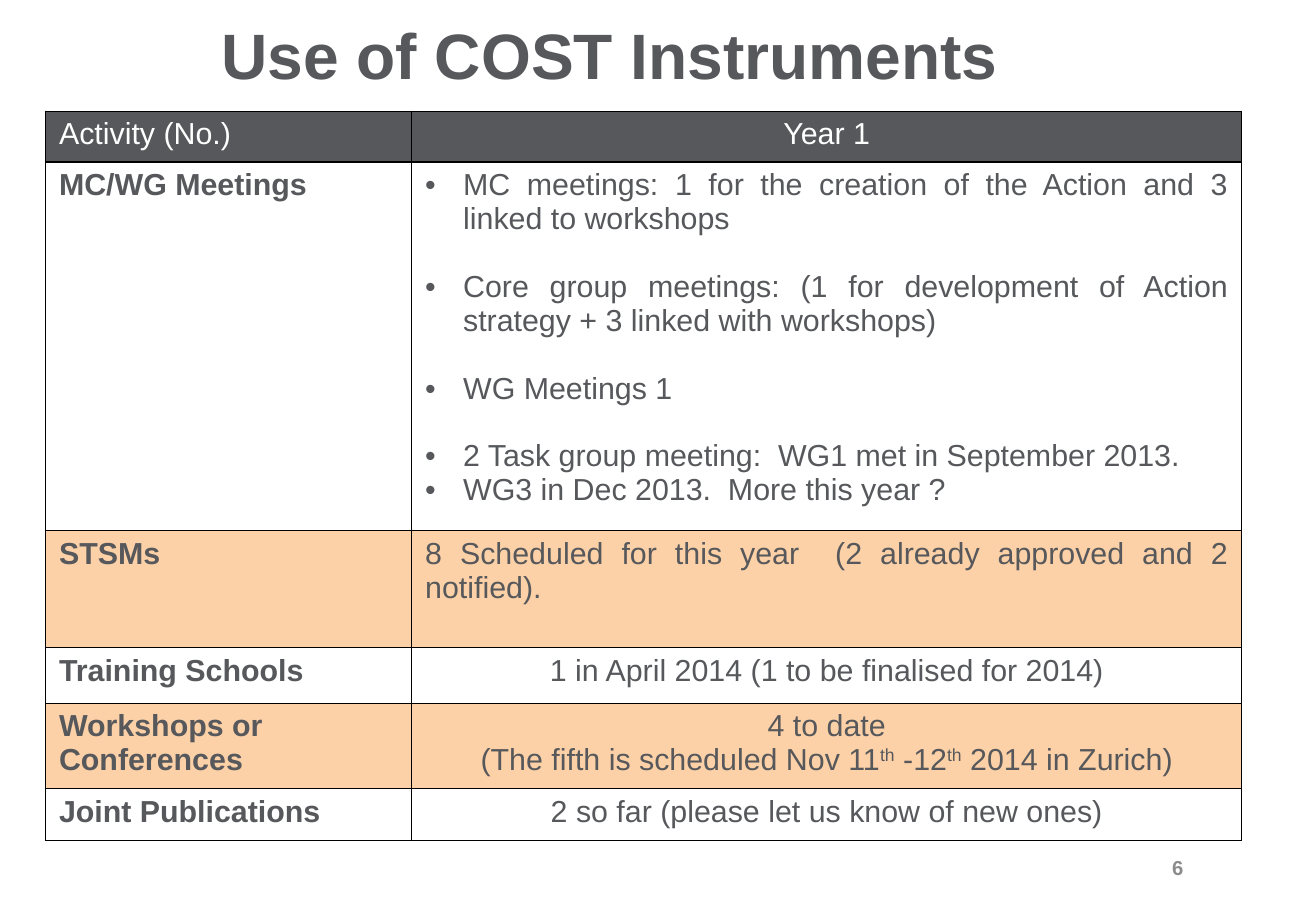
from lxml import etree
from pptx import Presentation
from pptx.dml.color import RGBColor
from pptx.enum import text
from pptx.oxml.ns import qn
from pptx.util import Pt

GREY, PEACH, WHITE, BLACK = "56585B", "FDD1A7", "FFFFFF", "000000"
LEFT, CENTER, RIGHT, JUSTIFY = (text.PP_ALIGN.LEFT, text.PP_ALIGN.CENTER,
                                text.PP_ALIGN.RIGHT, text.PP_ALIGN.JUSTIFY)

MEETINGS = [
    "MC meetings: 1 for the creation of the Action and 3 linked to workshops",
    "Core group meetings: (1 for development of Action strategy + 3 linked with workshops)",
    "WG Meetings 1",
    "2 Task group meeting:  WG1 met in September 2013.",
    "WG3 in Dec 2013.  More this year ?",
]
# A paragraph is a string, or a list of runs whose every second run is superscript.
WORKSHOPS = ["4 to date",
             ["(The fifth is scheduled Nov 11", "th", " -12", "th", " 2014 in Zurich)"]]
# Activity, paragraphs, alignment, row height, fill
ROWS = [
    ("Activity (No.)", ["Year 1"], CENTER, 30, GREY),
    ("MC/WG Meetings", MEETINGS, JUSTIFY, 209, None),
    ("STSMs", ["8 Scheduled for this year  (2 already approved and 2 notified)."],
     JUSTIFY, 69.5, PEACH),
    ("Training Schools", ["1 in April 2014 (1 to be finalised for 2014)"], CENTER, 33, None),
    ("Workshops or Conferences", WORKSHOPS, CENTER, 49, PEACH),
    ("Joint Publications", ["2 so far (please let us know of new ones)"], CENTER, 31, None),
]


def rgb(value):
    return RGBColor.from_string(value)


def format_run(r, size, color, bold=False):
    r.font.name = "Arial"
    r.font.size = Pt(size)
    r.font.bold = bold
    r.font.color.rgb = rgb(color)


def add_label(slide, box, label, size, color, align, anchor):
    tb = slide.shapes.add_textbox(*map(Pt, box))
    tf = tb.text_frame
    tf.word_wrap = True
    tf.vertical_anchor = anchor
    tf.text = label
    p = tf.paragraphs[0]
    p.alignment = align
    format_run(p.runs[0], size, color, bold=True)


def add_bullet(p, indent=22.5):
    pPr = p._p.get_or_add_pPr()
    pPr.set("marL", str(Pt(indent)))
    pPr.set("indent", str(-Pt(indent)))
    etree.SubElement(pPr, qn("a:buFont")).set("typeface", "Arial")
    etree.SubElement(pPr, qn("a:buChar")).set("char", "•")


def style_cell(cell, fill):
    """Set margins, black borders and the fill."""
    cell.margin_left = cell.margin_right = Pt(8)
    cell.margin_top = cell.margin_bottom = Pt(3.6)
    tcPr = cell._tc.get_or_add_tcPr()
    for side in ("a:lnL", "a:lnR", "a:lnT", "a:lnB"):
        ln = etree.SubElement(tcPr, qn(side), w=str(Pt(1)))
        solid = etree.SubElement(ln, qn("a:solidFill"))
        etree.SubElement(solid, qn("a:srgbClr"), val=BLACK)
    if fill:
        cell.fill.solid()
        cell.fill.fore_color.rgb = rgb(fill)
    else:
        cell.fill.background()


def fill_cell(cell, paragraphs, align, color, bold=False):
    tf = cell.text_frame
    for i, content in enumerate(paragraphs):
        p = tf.add_paragraph() if i else tf.paragraphs[0]
        p.alignment = align
        if paragraphs is MEETINGS:
            if 0 < i < len(MEETINGS) - 1:
                p.space_before = Pt(20)
            add_bullet(p)
        for j, part in enumerate([content] if isinstance(content, str) else content):
            r = p.add_run()
            r.text = part
            format_run(r, 18, color, bold)
            if j % 2:
                r.font._element.set("baseline", "30000")


def add_activity_table(slide, left, top, width):
    height = sum(row[3] for row in ROWS)
    table = slide.shapes.add_table(len(ROWS), 2, Pt(left), Pt(top),
                                   Pt(width), Pt(height)).table
    table.horz_banding = False
    table.columns[0].width = Pt(217)
    table.columns[1].width = Pt(width - 217)
    for i, (activity, paragraphs, align, row_height, fill) in enumerate(ROWS):
        table.rows[i].height = Pt(row_height)
        color = WHITE if i == 0 else GREY
        for cell in table.rows[i].cells:
            style_cell(cell, fill)
        fill_cell(table.cell(i, 0), [activity], LEFT, color, bold=i > 0)
        fill_cell(table.cell(i, 1), paragraphs, align, color)


def main():
    prs = Presentation()
    prs.slide_width, prs.slide_height = Pt(780), Pt(540)
    slide = prs.slides.add_slide(prs.slide_layouts[6])
    add_label(slide, (124, 5.5, 603, 60), "Use of COST Instruments", 38, GREY,
              LEFT, text.MSO_ANCHOR.TOP)
    add_activity_table(slide, 27, 66, 709)
    add_label(slide, (659.5, 499.5, 49, 29), "6", 12, "8C8C8C",
              RIGHT, text.MSO_ANCHOR.MIDDLE)
    prs.save("out.pptx")


if __name__ == "__main__":
    main()
